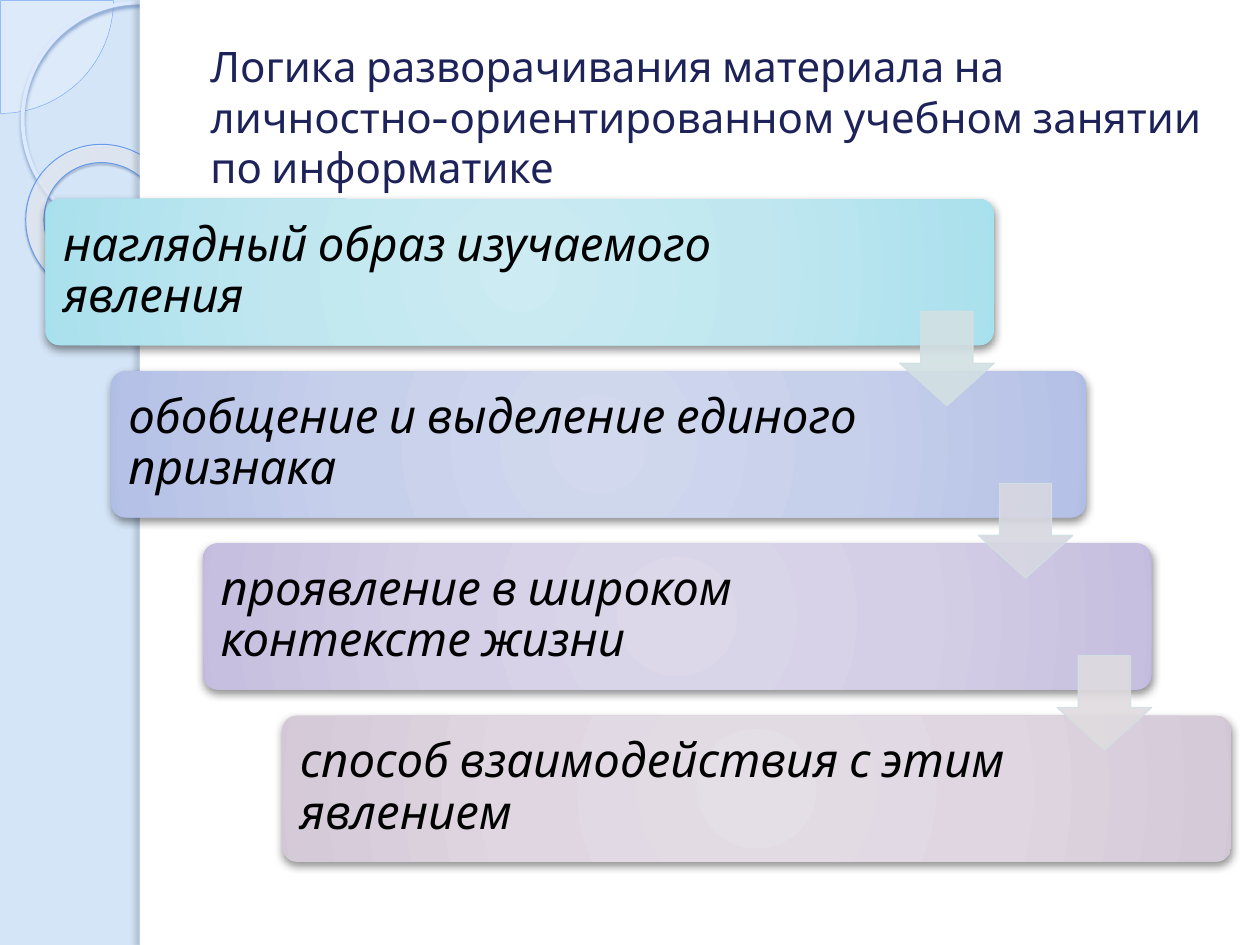
from lxml import etree
from pptx import Presentation
from pptx.dml.color import RGBColor
from pptx.enum.shapes import MSO_SHAPE
from pptx.enum.text import MSO_ANCHOR, MSO_AUTO_SIZE, PP_ALIGN
from pptx.oxml.ns import qn
from pptx.util import Inches, Pt

PIE, OVAL, DONUT = MSO_SHAPE.PIE, MSO_SHAPE.OVAL, MSO_SHAPE.DONUT
RECT, ROUNDED = MSO_SHAPE.RECTANGLE, MSO_SHAPE.ROUNDED_RECTANGLE
DOWN_ARROW = MSO_SHAPE.DOWN_ARROW
MIDDLE, LEFT, NO_FIT = MSO_ANCHOR.MIDDLE, PP_ALIGN.LEFT, MSO_AUTO_SIZE.NONE

FONT = "Cabin"
COLORS = {
    "background": "D4E5F7", "panel": "FFFFFF", "title": "1D2259", "text": "000000",
    "pie": "F2F6FF", "pie_line": "72A7F6", "ring_line": "DCE9FF",
    "donut_line": "659BEC", "arrow_line": "D2E0E3",
}
# Shadows: colour, opacity %, blur pt, distance pt, direction in degrees
RING_SHADOW = ("7193C6", 85, 2, 2, 90)
DONUT_SHADOW = ("31486A", 35, 1, 1.2, 75)
EDGE_SHADOW = ("54647E", 25, 3, 3, 180)
STEP_SHADOW = ("000000", 43, 5, 2, 90)
# Gradient stops: position %, colour, opacity %
DONUT_STOPS = [(0, "F5F9FF", 70), (70, "FBFCFF", 55), (100, "75ACFF", 60)]
STOP_POSITIONS = (0, 50, 97, 100)

# Steps: text, left, width, text width, gradient colours
STEPS = [
    ("наглядный образ изучаемого явления", 0.36, 7.53, 6.19,
     ("CCEBF2", "C0E7F0", "ABE1ED", "A3E1EF")),
    ("обобщение и выделение единого признака", 0.88, 7.74, 6.25,
     ("D2D9EE", "C7D0EB", "B5C1E6", "AEBCE6")),
    ("проявление в широком контексте жизни", 1.61, 7.53, 6.09,
     ("DCD8EA", "D4CFE6", "C6BFDF", "C2BADE")),
    ("способ взаимодействия с этим явлением", 2.24, 7.53, 6.08,
     ("E4DEE6", "DFD6E1", "D5CAD8", "D3C6D6")),
]
ARROW_FILLS = ("D2E0E3", "D7D7E1", "DFDBDF")


def add_color(parent, color, opacity=100):
    node = etree.SubElement(parent, qn("a:srgbClr"), val=color)
    if opacity < 100:
        etree.SubElement(node, qn("a:alpha"), val=str(opacity * 1000))


def set_opacity(color_format, opacity):
    color = color_format._xFill.find(qn("a:srgbClr"))
    etree.SubElement(color, qn("a:alpha"), val=str(opacity * 1000))


def set_radial(shape, stops, focus=(50, 50, 50, 50)):
    shape.fill.solid()
    properties = shape._element.spPr
    gradient = etree.Element(qn("a:gradFill"), rotWithShape="1")
    stop_list = etree.SubElement(gradient, qn("a:gsLst"))
    for position, color, opacity in stops:
        stop = etree.SubElement(stop_list, qn("a:gs"), pos=str(position * 1000))
        add_color(stop, color, opacity)
    route = etree.SubElement(gradient, qn("a:path"), path="circle")
    sides = {side: str(value * 1000) for side, value in zip("ltrb", focus)}
    etree.SubElement(route, qn("a:fillToRect"), **sides)
    properties.replace(properties.find(qn("a:solidFill")), gradient)


def add_part(slide, kind, box, fill=None, opacity=100, line=None, adjust=(), shadow=None):
    """Add a preset shape; line is (colour, width pt, opacity %)."""
    shape = slide.shapes.add_shape(kind, *map(Inches, box))
    for index, value in enumerate(adjust):
        shape.adjustments[index] = value
    if fill:
        shape.fill.solid()
        shape.fill.fore_color.rgb = RGBColor.from_string(fill)
    else:
        shape.fill.background()
    if line:
        shape.line.color.rgb = RGBColor.from_string(line[0])
        shape.line.width = Pt(line[1])
    else:
        shape.line.fill.background()
    properties = shape._element.spPr
    for path, value in (("a:solidFill", opacity), ("a:ln/a:solidFill", line[2] if line else 100)):
        if value < 100:
            parent = properties
            for tag in path.split("/"):
                parent = parent.find(qn(tag))
            etree.SubElement(parent[0], qn("a:alpha"), val=str(value * 1000))
    shape.shadow.inherit = False
    if shadow:
        color, strength, blur, distance, angle = shadow
        outer = etree.SubElement(
            properties.find(qn("a:effectLst")), qn("a:outerShdw"),
            blurRad=str(Pt(blur)), dist=str(Pt(distance)), dir=str(angle * 60000),
            algn="tl", rotWithShape="0")
        add_color(outer, color, strength)
    return shape


def add_side_band(slide, left, top, width, height):
    """Circles on the tinted band, then the white panel that covers the rest."""
    add_part(slide, PIE, (left - 0.89, top - 0.89, 1.79, 1.79), COLORS["pie"], 33,
             (COLORS["pie_line"], 0.25, 100), (0, 54))
    add_part(slide, OVAL, (left + 0.18, top + 0.02, 1.86, 1.86),
             line=(COLORS["ring_line"], 2.15, 100), shadow=RING_SHADOW)
    donut = add_part(slide, DONUT, (left + 0.2, top + 1.15, 1.23, 1.21),
                     line=(COLORS["donut_line"], 0.58, 100), adjust=(0.12,),
                     shadow=DONUT_SHADOW)
    donut.rotation = 38.6
    set_radial(donut, DONUT_STOPS, (-408, -50, 508, 150))
    panel_left = left + 1.11
    add_part(slide, RECT, (panel_left, top, width - 1.11, height), COLORS["panel"])
    add_part(slide, RECT, (panel_left, top, 0.08, height), COLORS["panel"],
             shadow=EDGE_SHADOW)


def format_text(frame, text, size, color):
    frame.text = text
    frame.word_wrap = True
    frame.auto_size = NO_FIT
    frame.vertical_anchor = MIDDLE
    paragraph = frame.paragraphs[0]
    paragraph.alignment = LEFT
    paragraph.font.name = FONT
    paragraph.font.size = Pt(size)
    paragraph.font.color.rgb = RGBColor.from_string(color)
    return paragraph


def add_title(slide, left, top, width, height):
    title = slide.shapes.title
    title.left, title.top, title.width, title.height = map(
        Inches, (left, top, width, height))
    format_text(title.text_frame,
                "Логика разворачивания материала на личностно-ориентированном "
                "учебном занятии по информатике", 24, COLORS["title"])
    # Bring the title in front of the white panel
    slide.shapes._spTree.append(title._element)


def add_step(slide, left, top, width, height, text, text_width, colors):
    card = add_part(slide, ROUNDED, (left, top, width, height), adjust=(0.1,),
                    shadow=STEP_SHADOW)
    set_radial(card, [(pos, color, 100) for pos, color in zip(STOP_POSITIONS, colors)])
    caption = slide.shapes.add_textbox(
        *map(Inches, (left + 0.03, top + 0.03, text_width, height - 0.07)))
    frame = caption.text_frame
    frame.margin_left = frame.margin_right = Inches(0.11)
    frame.margin_top = frame.margin_bottom = Inches(0.11)
    paragraph = format_text(frame, text, 27, COLORS["text"])
    paragraph.font.italic = True
    paragraph.line_spacing = 0.9


def add_staircase(slide, top, height):
    """Four steps spread evenly over the height, with arrows between them."""
    card_height = 1.16
    pitch = (height - card_height) / (len(STEPS) - 1)
    for index, (text, left, width, text_width, colors) in enumerate(STEPS):
        add_step(slide, left, top + index * pitch, width, card_height,
                 text, text_width, colors)
    for index, fill in enumerate(ARROW_FILLS):
        box = (7.14 + index * 0.625, top + 0.89 + index * pitch, 0.75, 0.75)
        add_part(slide, DOWN_ARROW, box, fill, 90,
                 (COLORS["arrow_line"], 0.75, 90), (0.55, 0.45))


def main():
    deck = Presentation()
    deck.slide_width, deck.slide_height = Inches(10), Inches(7.5)
    slide = deck.slides.add_slide(deck.slide_layouts[5])
    slide.background.fill.solid()
    slide.background.fill.fore_color.rgb = RGBColor.from_string(COLORS["background"])
    add_side_band(slide, 0, 0, 10, 7.5)
    add_title(slide, 1.57, 0.3, 8.2, 1.25)
    add_staircase(slide, 1.58, 5.26)
    deck.save("out.pptx")


if __name__ == "__main__":
    main()
